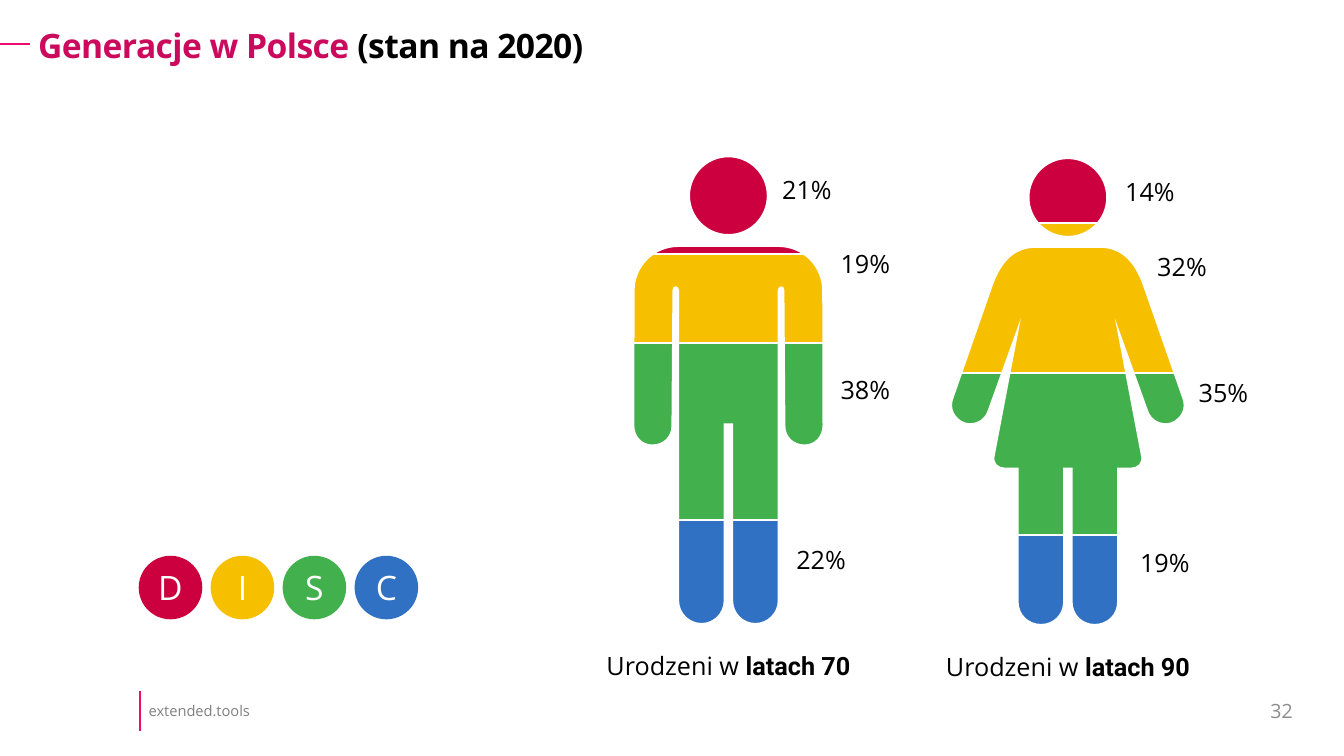
from dataclasses import dataclass
from itertools import pairwise

from lxml.etree import SubElement
from pptx import Presentation
from pptx.dml.color import RGBColor
from pptx.enum.shapes import MSO_CONNECTOR, MSO_SHAPE
from pptx.enum.text import MSO_ANCHOR, PP_ALIGN
from pptx.oxml.ns import qn
from pptx.shapes.autoshape import Shape
from pptx.slide import Slide
from pptx.text.text import Font
from pptx.util import Pt

Point = tuple[float, float]
Outline = tuple[tuple[float, ...], ...]


@dataclass(frozen=True)
class Theme:
    accent: str = "CC0A5D"
    rule: str = "ED0C6D"
    black: str = "000000"
    white: str = "FFFFFF"
    footer: str = "808080"
    page: str = "8C8C8C"
    disc: tuple[str, ...] = ("CC003E", "F6BF00", "42B04D", "3171C3")
    family: str = "Open Sans"
    bold_family: str = "Roboto"
    large: float = 24
    body: float = 18
    page_size: float = 14
    footer_size: float = 10.5
    line: float = 1.5


@dataclass(frozen=True)
class Share:
    value: str
    left: float
    top: float


@dataclass(frozen=True)
class Person:
    """A figure mirrored about its axis; x in half_body is the distance from the axis.

    A pair in half_body is a straight step, six numbers are a cubic curve.
    """
    decade: str
    axis: float
    band_width: float
    band_edges: tuple[float, ...]
    head_y: float
    half_body: Outline
    shares: tuple[Share, ...]
    caption_top: float


THEME = Theme()
HEAD_RADIUS = 27.4
HEAD_HANDLE = 15.13
MASK_MARGIN = 4

MAN = Person(
    "latach 70", 520.3, 139.6, (110.2, 181.4, 244.8, 371.5, 447.8), 139.8,
    ((35.6, 176.4), (52.9, 176.4, 66.8, 190.1, 67, 207.4), (67.2, 303.8),
     (67.2, 311.8, 61.6, 317.5, 54.4, 317.5), (46.4, 317.5, 40.7, 311.8, 40.7, 304.2),
     (40, 207.4), (40, 205.9, 39.2, 204.5, 37.8, 204.5),
     (36.4, 204.5, 35.2, 205.9, 35.2, 207.4), (35.2, 429.1),
     (35.2, 437.8, 27.9, 445, 19.2, 445), (10.5, 445, 3.4, 437.8, 3.4, 429.1),
     (3.4, 302.4)),
    (Share("21%", 558.7, 124.6), Share("19%", 600.4, 177.4),
     Share("38%", 600.4, 267.4), Share("22%", 568.8, 388.8)),
    464.4)

WOMAN = Person(
    "latach 90", 762.8, 172, (110.9, 159.1, 266.4, 382.3, 448.6), 141.1,
    ((23.4, 177.1), (37.1, 177.1, 47.2, 185.8, 53.6, 203.8), (81.7, 284.4),
     (84.6, 291.6, 81, 298.8, 73.8, 301.7), (66.6, 303.8, 59.4, 300.2, 57.2, 293),
     (33.6, 227.5), (52.2, 325.4), (53.6, 330.5, 50, 334.1, 45, 334.1),
     (35.2, 334.1), (35.2, 429.8), (35.2, 439.2, 27.9, 445.7, 19.2, 445.7),
     (10.5, 445.7, 3.4, 439.2, 3.4, 429.8), (3.4, 334.1)),
    (Share("14%", 803.7, 126), Share("32%", 826.6, 179.3),
     Share("35%", 856.2, 269.3), Share("19%", 814.3, 390.6)),
    465.1)


def set_font(font: Font, size: float, color: str, family: str = THEME.family,
             bold: bool = False) -> None:
    font.size, font.name, font.bold = Pt(size), family, bold
    font.color.rgb = RGBColor.from_string(color)


def add_label(slide: Slide, text: str, left: float, top: float, width: float,
              height: float, size: float, color: str, align: PP_ALIGN = PP_ALIGN.LEFT,
              anchor: MSO_ANCHOR = MSO_ANCHOR.TOP, inset: float = 0) -> Shape:
    label = slide.shapes.add_textbox(Pt(left), Pt(top), Pt(width), Pt(height))
    frame = label.text_frame
    frame.word_wrap = True
    frame.vertical_anchor = anchor
    frame.margin_left = frame.margin_right = Pt(inset)
    frame.margin_top = frame.margin_bottom = 0
    paragraph = frame.paragraphs[0]
    paragraph.text, paragraph.alignment = text, align
    set_font(paragraph.font, size, color)
    return label


def add_rule(slide: Slide, start: Point, end: Point) -> None:
    rule = slide.shapes.add_connector(MSO_CONNECTOR.STRAIGHT, *map(Pt, start + end))
    rule.line.color.rgb = RGBColor.from_string(THEME.rule)
    rule.line.width = Pt(THEME.line)
    SubElement(rule._element.spPr, qn("a:effectLst"))


def paint(shape: Shape, color: str) -> None:
    shape.shadow.inherit = False
    shape.fill.solid()
    shape.fill.fore_color.rgb = RGBColor.from_string(color)
    shape.line.fill.background()


def half_head(y: float) -> Outline:
    r, h = HEAD_RADIUS, HEAD_HANDLE
    return ((0, y - r), (h, y - r, r, y - h, r, y), (r, y + h, h, y + r, 0, y + r))


def mirrored(half: Outline) -> Outline:
    """Close a half outline with its reflection, walked backwards."""
    back = [half[-1][-2:]] if half[-1][-2] else []
    for before, step in reversed(list(pairwise(half))):
        back.append(step[2:4] + step[0:2] + before[-2:] if len(step) == 6 else before[-2:])
    reflected = (tuple(-v if k % 2 == 0 else v for k, v in enumerate(step)) for step in back)
    return half + tuple(reflected)


def add_mask(slide: Slide, person: Person) -> None:
    """Cover the bands with a white sheet that has a person-shaped opening."""
    reach = person.band_width / 2 + MASK_MARGIN
    left, right = person.axis - reach, person.axis + reach
    top, bottom = person.band_edges[0] - MASK_MARGIN, person.band_edges[-1] + MASK_MARGIN
    builder = slide.shapes.build_freeform(Pt(left), Pt(top), scale=1.0)
    builder.add_line_segments([(Pt(right), Pt(top)), (Pt(right), Pt(bottom)),
                               (Pt(left), Pt(bottom))], close=True)
    sheet = builder.convert_to_shape()
    paint(sheet, THEME.white)
    contour = next(sheet._element.iter(qn("a:path")))
    for half in (person.half_body, half_head(person.head_y)):
        for i, step in enumerate(mirrored(half)):
            tag = "a:moveTo" if i == 0 else "a:lnTo" if len(step) == 2 else "a:cubicBezTo"
            segment = SubElement(contour, qn(tag))
            for x, y in zip(step[::2], step[1::2]):
                SubElement(segment, qn("a:pt"), x=str(Pt(reach - x)), y=str(Pt(y - top)))
        SubElement(contour, qn("a:close"))


def add_person(slide: Slide, person: Person) -> None:
    for color, (top, bottom) in zip(THEME.disc, pairwise(person.band_edges)):
        band = slide.shapes.add_shape(
            MSO_SHAPE.RECTANGLE, Pt(person.axis - person.band_width / 2), Pt(top),
            Pt(person.band_width), Pt(bottom - top))
        paint(band, color)
        band.line.color.rgb = RGBColor.from_string(THEME.white)
        band.line.width = Pt(THEME.line)
    add_mask(slide, person)
    for share in person.shares:
        add_label(slide, share.value, share.left, share.top, 42.5, 24,
                  THEME.body, THEME.black)
    caption = add_label(slide, "Urodzeni w ", person.axis - 91, person.caption_top, 182, 22,
                        THEME.body, THEME.black, PP_ALIGN.CENTER)
    decade = caption.text_frame.paragraphs[0].add_run()
    decade.text = person.decade
    set_font(decade.font, THEME.body, THEME.black, THEME.bold_family, bold=True)


def add_disc_legend(slide: Slide) -> None:
    for i, (letter, color) in enumerate(zip("DISC", THEME.disc)):
        badge = slide.shapes.add_shape(MSO_SHAPE.OVAL, Pt(99.1 + 51.4 * i), Pt(397),
                                       Pt(45.4), Pt(45.4))
        paint(badge, color)
        badge.text_frame.vertical_anchor = MSO_ANCHOR.MIDDLE
        paragraph = badge.text_frame.paragraphs[0]
        paragraph.text, paragraph.alignment = letter, PP_ALIGN.CENTER
        set_font(paragraph.font, THEME.large, THEME.white)


def format_title(slide: Slide) -> None:
    title = slide.shapes.title
    title.left, title.top, title.width, title.height = map(Pt, (21.4, 18, 909.4, 58.3))
    frame = title.text_frame
    frame.vertical_anchor = MSO_ANCHOR.TOP
    frame.margin_left = frame.margin_right = Pt(5.8)
    frame.margin_top = frame.margin_bottom = Pt(2.9)
    paragraph = frame.paragraphs[0]
    paragraph.alignment, paragraph.line_spacing = PP_ALIGN.LEFT, 0.9
    for text, color in (("Generacje w Polsce ", THEME.accent),
                        ("(stan na 2020)", THEME.black)):
        run = paragraph.add_run()
        run.text = text
        set_font(run.font, THEME.large, color, bold=True)
        run._r.get_or_add_rPr().set("spc", "-40")


def main() -> None:
    presentation = Presentation()
    presentation.slide_width, presentation.slide_height = Pt(960), Pt(540)
    slide = presentation.slides.add_slide(presentation.slide_layouts[5])
    format_title(slide)
    add_rule(slide, (0, 31.7), (21.6, 31.7))
    add_rule(slide, (100, 493.5), (100, 522))
    add_label(slide, "extended.tools", 96.8, 496.1, 123.8, 23, THEME.footer_size,
              THEME.footer, anchor=MSO_ANCHOR.MIDDLE, inset=9.4)
    add_label(slide, "32", 839.8, 493.2, 90.7, 28.8, THEME.page_size, THEME.page,
              PP_ALIGN.RIGHT, MSO_ANCHOR.MIDDLE, inset=7.2)
    for person in (MAN, WOMAN):
        add_person(slide, person)
    add_disc_legend(slide)
    presentation.save("out.pptx")


if __name__ == "__main__":
    main()
